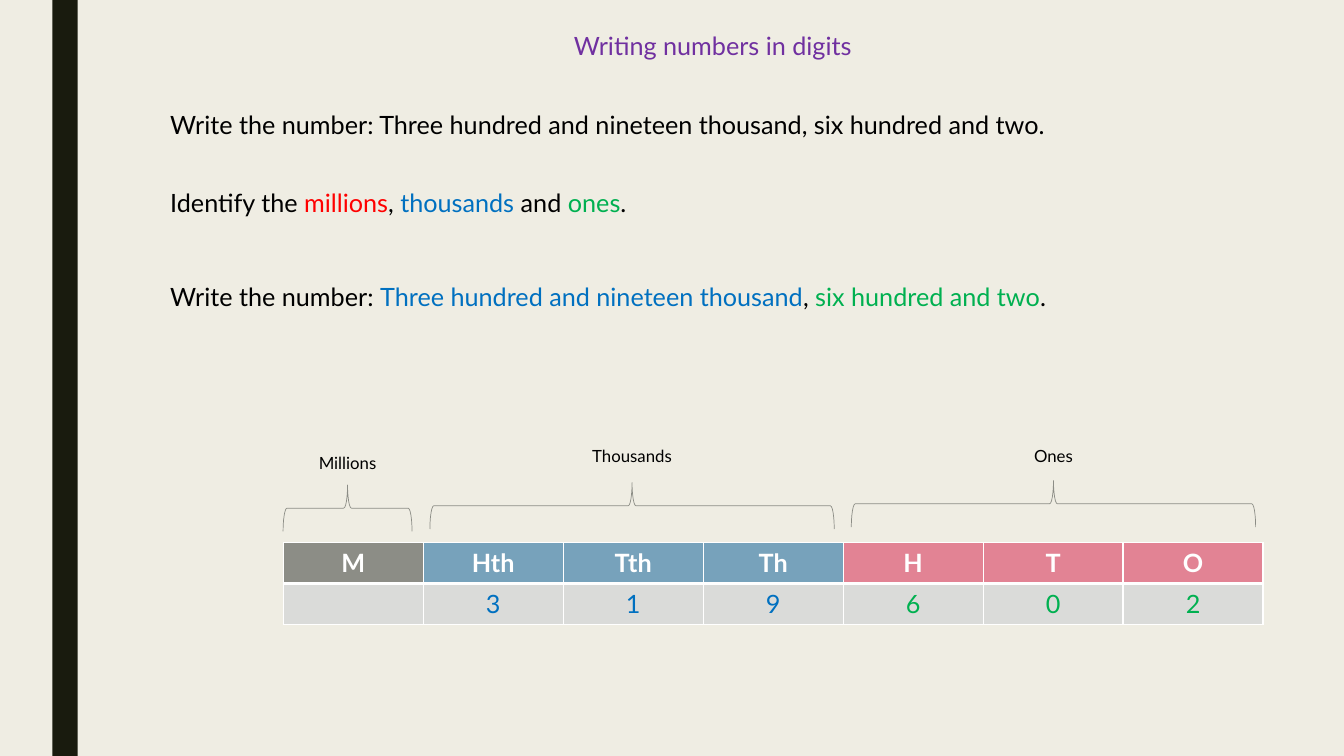
from lxml import etree
from pptx import Presentation
from pptx.dml.color import RGBColor
from pptx.enum.shapes import MSO_SHAPE as Preset
from pptx.enum.text import MSO_ANCHOR as Anchor, PP_ALIGN as Align
from pptx.oxml.ns import qn
from pptx.util import Cm, Pt

FONT = "Lato"
COLORS = {
    "background": "EFEDE3", "bar": "191B0E", "black": "000000", "white": "FFFFFF",
    "title": "7030A0", "millions": "FF0000", "thousands": "0070C0", "ones": "00B050",
    "grey": "8C8D86", "blue": "77A2BB", "pink": "E28394", "pale": "DADBD9",
}

# Column heading, digit, heading fill, digit colour
COLUMNS = [
    ("M", "", "grey", "millions"),
    ("Hth", "3", "blue", "thousands"),
    ("Tth", "1", "blue", "thousands"),
    ("Th", "9", "blue", "thousands"),
    ("H", "6", "pink", "ones"),
    ("T", "0", "pink", "ones"),
    ("O", "2", "pink", "ones"),
]

# Label, centre, label top, brace top, brace length (relative to the table box)
GROUPS = [
    ("Millions", 1.62, -2.39, -1.45, 3.25),
    ("Thousands", 8.79, -2.57, -1.51, 10.19),
    ("Ones", 19.41, -2.57, -1.56, 10.19),
]

# Top of each line and its coloured runs
LINES = [
    (2.62, [("Write the number: Three hundred and nineteen thousand, "
             "six hundred and two.", "black")]),
    (4.6, [("Identify the ", "black"), ("millions", "millions"), (", ", "black"),
           ("thousands", "thousands"), (" and ", "black"), ("ones", "ones"),
           (".", "black")]),
    (6.96, [("Write the number: ", "black"),
            ("Three hundred and nineteen thousand", "thousands"), (", ", "black"),
            ("six hundred and two", "ones"), (".", "black")]),
]


def rgb(name):
    return RGBColor.from_string(COLORS[name])


def write(frame, runs, size=18, bold=False, align=Align.LEFT):
    """Fill a text frame with one paragraph of (text, colour) runs."""
    frame.word_wrap = True
    paragraph = frame.paragraphs[0]
    paragraph.alignment = align
    for text, color in runs:
        run = paragraph.add_run()
        run.text = text
        run.font.name = FONT
        run.font.size = Pt(size)
        run.font.bold = bold
        run.font.color.rgb = rgb(color)


def add_text(slide, left, top, width, height, runs, **text_format):
    box = slide.shapes.add_textbox(Cm(left), Cm(top), Cm(width), Cm(height))
    write(box.text_frame, runs, **text_format)


def add_background(slide, left, top, width, height):
    slide.background.fill.solid()
    slide.background.fill.fore_color.rgb = rgb("background")
    bar = slide.shapes.add_shape(Preset.RECTANGLE, Cm(left), Cm(top), Cm(width), Cm(height))
    bar.shadow.inherit = False
    bar.fill.solid()
    bar.fill.fore_color.rgb = rgb("bar")
    bar.line.fill.background()


def add_lines(slide, left, width):
    for top, runs in LINES:
        add_text(slide, left, top, width, 1.03, runs)


def set_borders(cell, top, bottom):
    properties = cell._tc.get_or_add_tcPr()
    for side, points in (("L", 1), ("R", 1), ("T", top), ("B", bottom)):
        line = etree.SubElement(properties, qn(f"a:ln{side}"), w=str(Pt(points)))
        fill = etree.SubElement(line, qn("a:solidFill"))
        etree.SubElement(fill, qn("a:srgbClr"), val=COLORS["white"])


def format_cell(cell, text, color, fill, top, bottom, bold):
    set_borders(cell, top, bottom)
    cell.fill.solid()
    cell.fill.fore_color.rgb = rgb(fill)
    cell.vertical_anchor = Anchor.MIDDLE
    write(cell.text_frame, [(text, color)], bold=bold, align=Align.CENTER)


def add_place_values(slide, left, top, width, height):
    frame = slide.shapes.add_table(2, len(COLUMNS), Cm(left), Cm(top), Cm(width), Cm(height))
    table = frame.table
    table.first_row = table.horz_banding = False
    for index, (heading, digit, fill, color) in enumerate(COLUMNS):
        format_cell(table.cell(0, index), heading, "white", fill, 1, 3, True)
        format_cell(table.cell(1, index), digit, color, "pale", 3, 1, False)


def add_groups(slide, left, top):
    depth, label_width = 1.17, 5.72
    for label, center, label_top, brace_top, length in GROUPS:
        # The brace is turned about its centre to open downwards
        middle = left + center
        brace = slide.shapes.add_shape(
            Preset.RIGHT_BRACE, Cm(middle - depth / 2),
            Cm(top + brace_top + depth / 2 - length / 2), Cm(depth), Cm(length))
        brace.rotation = 270
        brace.shadow.inherit = False
        brace.fill.background()
        brace.line.color.rgb = rgb("grey")
        brace.line.width = Pt(0.5)
        add_text(slide, middle - label_width / 2, top + label_top, label_width, 0.76,
                 [(label, "black")], size=12, align=Align.CENTER)


def main():
    presentation = Presentation()
    presentation.slide_width = Cm(33.87)
    presentation.slide_height = Cm(19.05)
    slide = presentation.slides.add_slide(presentation.slide_layouts[6])

    # Background and side bar
    add_background(slide, 1.32, 0, 0.64, 19.05)
    # Title and instructions
    add_text(slide, 5.28, 0.64, 25.53, 1.03, [("Writing numbers in digits ", "title")],
             align=Align.CENTER)
    add_lines(slide, 4.04, 28.65)
    # Place value table with its braces
    add_place_values(slide, 7.14, 13.67, 24.69, 2.06)
    add_groups(slide, 7.14, 13.67)

    presentation.save("out.pptx")


if __name__ == "__main__":
    main()
